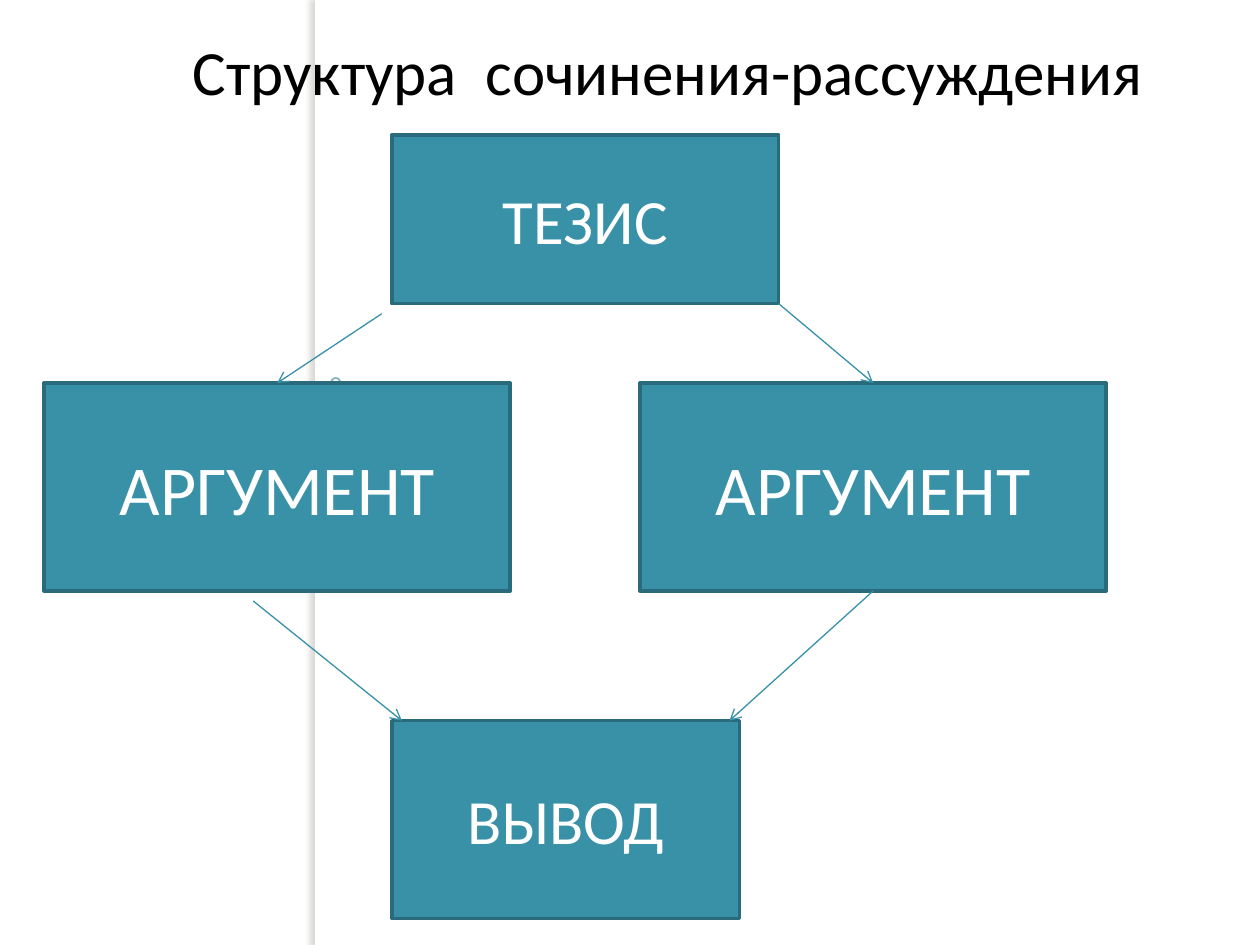
from lxml.etree import SubElement
from pptx import Presentation
from pptx.dml.color import RGBColor
from pptx.enum.shapes import MSO_CONNECTOR, MSO_SHAPE
from pptx.enum.text import MSO_ANCHOR as ANCHOR, MSO_AUTO_SIZE as AUTO, PP_ALIGN as ALIGN
from pptx.oxml.ns import qn
from pptx.util import Inches, Pt

WIDTH, HEIGHT = 10, 7.5
FONT = "Calibri"
TEAL, DARK_TEAL = "3891A7", "296B7C"
LEFT, CENTRE, RIGHT = 0.35, 3.11, 5.08
ROWS = (1.07, 3.04, 5.72)
ARGUMENT_SIZE = (3.7, 1.65)


def color(hex_code):
    return RGBColor.from_string(hex_code)


def set_attrs(target, values):
    for name, value in values.items():
        setattr(target, name, value)


def write(p, text, size, hex_code):
    r = p.add_run()
    r.text = text
    set_attrs(r.font, {"name": FONT, "size": Pt(size)})
    r.font.color.rgb = color(hex_code)


def set_line(sp, hex_code, width):
    sp.line.color.rgb = color(hex_code)
    sp.line.width = Pt(width)


def add_plain(s, kind, box):
    """Add a preset shape with no shadow, fill or line."""
    sp = s.shapes.add_shape(kind, *map(Inches, box))
    sp.shadow.inherit = False
    sp.fill.background()
    sp.line.fill.background()
    return sp


def add_side_strip(s):
    strip = add_plain(s, MSO_SHAPE.RECTANGLE, (WIDTH / 4, 0, 0.08, HEIGHT))
    strip.fill.solid()
    strip.fill.fore_color.rgb = color("FFFFFF")
    effects = strip.element.spPr.find(qn("a:effectLst"))
    shadow = SubElement(effects, qn("a:outerShdw"), blurRad=str(Pt(3)), dist=str(Pt(3)),
                        dir="10800000", algn="tl", rotWithShape="0")
    tint = SubElement(shadow, qn("a:srgbClr"), val="736F63")
    SubElement(tint, qn("a:alpha"), val="25000")

    ring = add_plain(s, MSO_SHAPE.OVAL, (2.63, 3, 0.07, 0.07))
    set_line(ring, "318093", 1)
    tint = next(ring.element.spPr.iter(qn("a:srgbClr")))
    SubElement(tint, qn("a:alpha"), val="60000")


def add_title(s, text):
    title = s.shapes.title
    set_attrs(title, {"left": Inches(LEFT), "top": Inches(0.21),
                      "width": Inches(9.21), "height": Inches(0.71)})
    tf = title.text_frame
    set_attrs(tf, {"word_wrap": True, "auto_size": AUTO.SHAPE_TO_FIT_TEXT,
                   "vertical_anchor": ANCHOR.TOP})
    p = tf.paragraphs[0]
    p.alignment = ALIGN.LEFT
    p._p.get_or_add_pPr().set("marL", str(Inches(1.08)))
    write(p, text, 36, "000000")
    s.shapes.element.append(title.element)  # in front of the side strip


def add_block(s, text, left, top, size, font_size=36):
    sp = add_plain(s, MSO_SHAPE.RECTANGLE, (left, top, *size))
    sp.fill.solid()
    sp.fill.fore_color.rgb = color(TEAL)
    set_line(sp, DARK_TEAL, 2)
    tf = sp.text_frame
    set_attrs(tf, {"word_wrap": True, "vertical_anchor": ANCHOR.MIDDLE})
    p = tf.paragraphs[0]
    p.alignment = ALIGN.CENTER
    write(p, text, font_size, "FFFFFF")
    return sp


def add_arrow(s, start, end, begin_block=None, end_block=None):
    """Draw an arrow; a begin block joins at its bottom, an end block at its top."""
    line = s.shapes.add_connector(MSO_CONNECTOR.STRAIGHT, *map(Inches, (*start, *end)))
    if begin_block is not None:
        line.begin_connect(begin_block, 2)
    if end_block is not None:
        line.end_connect(end_block, 0)
    set_line(line, TEAL, 0.75)
    SubElement(line.line._get_or_add_ln(), qn("a:tailEnd"), type="arrow")
    SubElement(line.element.spPr, qn("a:effectLst"))


def main():
    prs = Presentation()
    set_attrs(prs, {"slide_width": Inches(WIDTH), "slide_height": Inches(HEIGHT)})
    s = prs.slides.add_slide(prs.slide_layouts[5])

    add_side_strip(s)
    add_title(s, "Структура  сочинения-рассуждения")

    top, middle, bottom = ROWS
    add_block(s, "ТЕЗИС", CENTRE, top, (3.07, 1.34))
    first, second = [add_block(s, "АРГУМЕНТ", left, middle, ARGUMENT_SIZE, 40)
                     for left in (LEFT, RIGHT)]
    add_block(s, "ВЫВОД", CENTRE, bottom, (2.76, 1.57))

    add_arrow(s, (3.03, 2.49), (2.2, middle), end_block=first)
    add_arrow(s, (6.18, 2.41), (6.93, middle), end_block=second)
    add_arrow(s, (2.01, 4.77), (3.19, bottom))
    add_arrow(s, (6.93, 4.69), (5.79, bottom), begin_block=second)

    prs.save("out.pptx")


if __name__ == "__main__":
    main()
